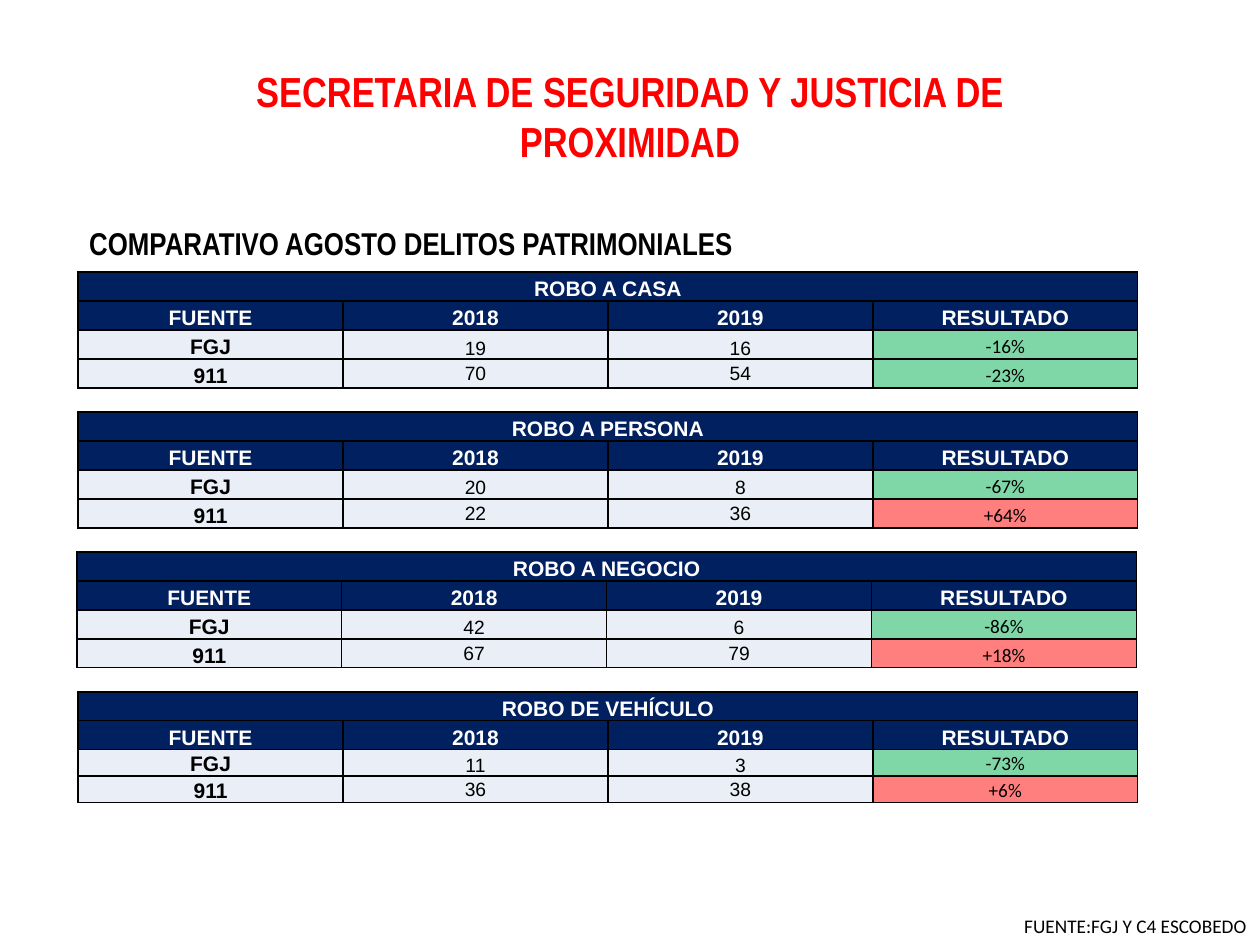
from dataclasses import dataclass

from lxml import etree
from pptx import Presentation
from pptx.dml.color import RGBColor
from pptx.enum.text import MSO_ANCHOR, MSO_AUTO_SIZE, PP_ALIGN
from pptx.oxml.ns import qn
from pptx.slide import Slide
from pptx.table import _Cell
from pptx.text.text import TextFrame
from pptx.util import Inches, Pt

CENTER, LEFT = PP_ALIGN.CENTER, PP_ALIGN.LEFT
TOP, MIDDLE, BOTTOM = MSO_ANCHOR.TOP, MSO_ANCHOR.MIDDLE, MSO_ANCHOR.BOTTOM
FIT_SHAPE = MSO_AUTO_SIZE.SHAPE_TO_FIT_TEXT

BLACK = RGBColor(0x00, 0x00, 0x00)
WHITE = RGBColor(0xFF, 0xFF, 0xFF)
RED = RGBColor(0xFF, 0x00, 0x00)
GREEN = RGBColor(0x00, 0xB0, 0x50)
NAVY = RGBColor(0x00, 0x20, 0x60)
PALE = RGBColor(0xEA, 0xEF, 0xF7)

HEADERS = ("FUENTE", "2018", "2019", "RESULTADO")
TABLE_TOP, TABLE_STEP = 2.16, 1.11
TABLE_WIDTH, ROW_HEIGHT = 8.41, 0.23


@dataclass
class CrimeTable:
    title: str
    fgj: tuple[str, str, str]
    calls: tuple[str, str, str]
    left: float = 0.62
    data_height: float = ROW_HEIGHT


CRIMES = (
    CrimeTable("ROBO A CASA", ("19", "16", "-16%"), ("70", "54", "-23%")),
    CrimeTable("ROBO A PERSONA", ("20", "8", "-67%"), ("22", "36", "+64%")),
    CrimeTable("ROBO A NEGOCIO", ("42", "6", "-86%"), ("67", "79", "+18%"), left=0.61),
    CrimeTable("ROBO DE VEHÍCULO", ("11", "3", "-73%"), ("36", "38", "+6%"),
               data_height=0.21),
)


def write(tf: TextFrame, text: str, size: float, font: str, color: RGBColor,
          bold: bool = False, align: PP_ALIGN = LEFT) -> None:
    p = tf.paragraphs[0]
    p.text = text
    p.alignment = align
    p.font.size = Pt(size)
    p.font.name = font
    p.font.bold = bold
    p.font.color.rgb = color


def add_borders(cell: _Cell) -> None:
    tc_pr = cell._tc.get_or_add_tcPr()
    for i, side in enumerate(("lnL", "lnR", "lnT", "lnB")):
        ln = etree.Element(qn(f"a:{side}"), w=str(Pt(1)))
        fill = etree.SubElement(ln, qn("a:solidFill"))
        etree.SubElement(fill, qn("a:srgbClr"), val=str(BLACK))
        tc_pr.insert(i, ln)


def fill_cell(cell: _Cell, color: RGBColor, alpha: int = 100) -> None:
    cell.fill.solid()
    cell.fill.fore_color.rgb = color
    if alpha < 100:
        clr = cell._tc.tcPr.find(f"{qn('a:solidFill')}/{qn('a:srgbClr')}")
        etree.SubElement(clr, qn("a:alpha"), val=str(alpha * 1000))


def format_cell(cell: _Cell, text: str, row: int, col: int) -> None:
    cell.margin_left = cell.margin_right = cell.margin_top = Inches(0.01)
    cell.margin_bottom = 0
    cell.vertical_anchor = MIDDLE if row == 3 and col in (1, 2) else BOTTOM
    tf = cell.text_frame
    if row < 2:
        fill_cell(cell, NAVY)
        write(tf, text, 12, "Arial", WHITE, True, CENTER)
    elif col == 0:
        fill_cell(cell, PALE)
        write(tf, text, 12, "Arial", BLACK, True, CENTER)
    elif col < 3:
        fill_cell(cell, PALE)
        write(tf, text, 11, "Arial", BLACK, align=CENTER)
    else:
        fill_cell(cell, GREEN if text.startswith("-") else RED, 50)
        write(tf, text, 11, "Calibri", BLACK, align=CENTER)
    add_borders(cell)


def add_crime_table(s: Slide, crime: CrimeTable, top: float) -> None:
    rows = ((crime.title, "", "", ""), HEADERS,
            ("FGJ", *crime.fgj), ("911", *crime.calls))
    heights = (ROW_HEIGHT, ROW_HEIGHT, crime.data_height, crime.data_height)
    tbl = s.shapes.add_table(len(rows), len(HEADERS), Inches(crime.left), Inches(top),
                             Inches(TABLE_WIDTH), Inches(sum(heights))).table
    tbl.first_row = tbl.horz_banding = False
    tbl.cell(0, 0).merge(tbl.cell(0, len(HEADERS) - 1))
    for r, (texts, height) in enumerate(zip(rows, heights)):
        tbl.rows[r].height = Inches(height)
        for c, text in enumerate(texts):
            format_cell(tbl.cell(r, c), text, r, c)


def add_text(s: Slide, left: float, top: float, width: float, height: float,
             wrap: bool) -> TextFrame:
    tf = s.shapes.add_textbox(Inches(left), Inches(top),
                              Inches(width), Inches(height)).text_frame
    tf.word_wrap = wrap
    tf.auto_size = FIT_SHAPE
    return tf


def main() -> None:
    prs = Presentation()
    prs.slide_width, prs.slide_height = Inches(10), Inches(7.5)
    s = prs.slides.add_slide(prs.slide_layouts[5])

    title = s.shapes.title
    title.left, title.top = Inches(1.9), Inches(0.47)
    title.width, title.height = Inches(6.2), Inches(0.91)
    tf = title.text_frame
    tf.word_wrap = True
    tf.auto_size = FIT_SHAPE
    tf.vertical_anchor = TOP
    write(tf, "SECRETARIA DE SEGURIDAD Y JUSTICIA DE PROXIMIDAD",
          24, "Arial Narrow", RED, True, CENTER)

    for i, crime in enumerate(CRIMES):
        add_crime_table(s, crime, TABLE_TOP + i * TABLE_STEP)

    write(add_text(s, 0.61, 1.73, 7.38, 0.4, True),
          "COMPARATIVO AGOSTO DELITOS PATRIMONIALES", 18, "Arial Narrow", BLACK, True)
    write(add_text(s, 8.03, 7.21, 1.98, 0.29, False),
          "FUENTE:FGJ Y C4 ESCOBEDO", 11, "Calibri", BLACK)

    prs.save("out.pptx")


if __name__ == "__main__":
    main()
